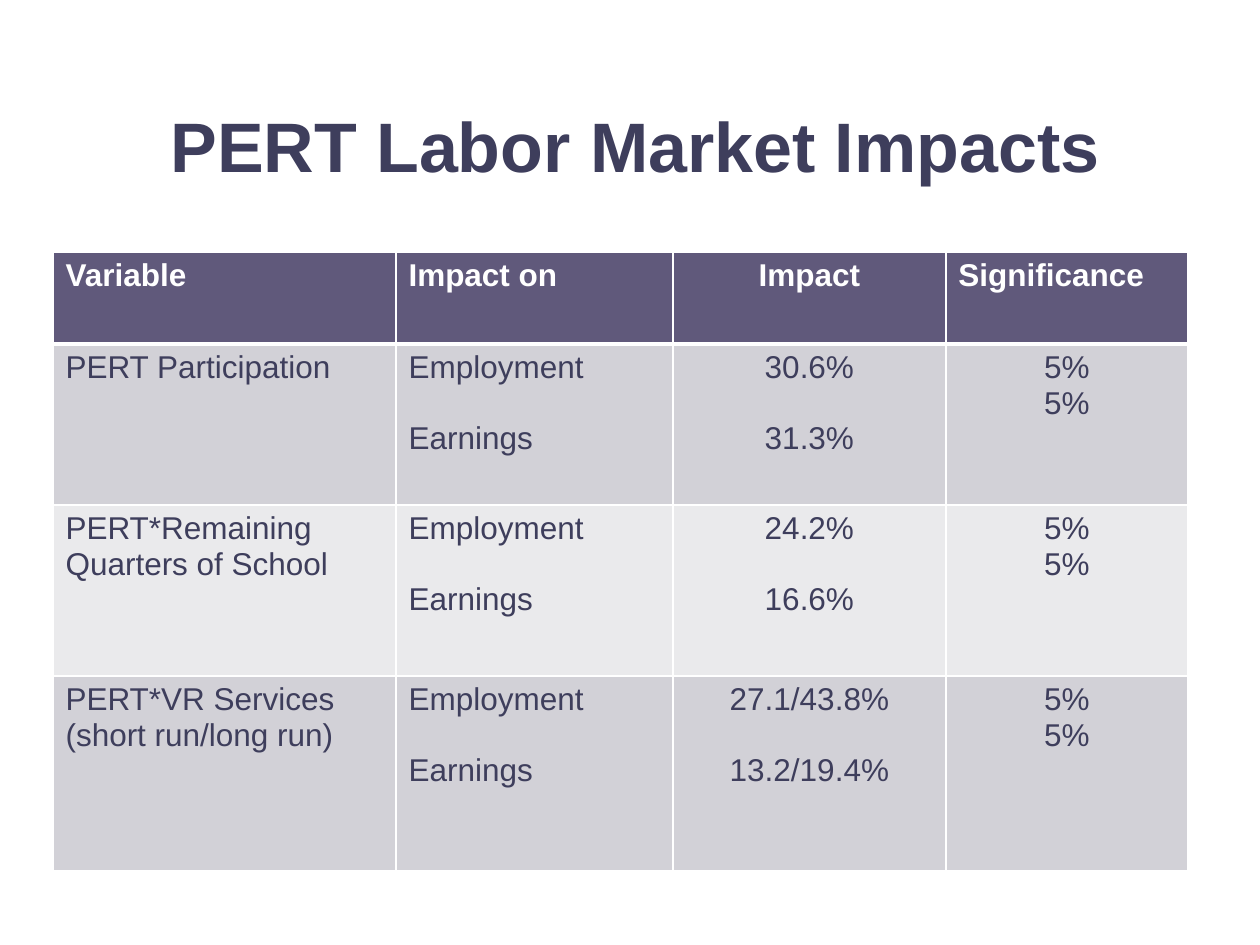
import pptx
import pptx.dml.color
import pptx.enum.text
import pptx.oxml
import pptx.oxml.ns
import pptx.util

EMU_PER_PX = 914400 / 126
FONT = "Arial"
INK = "3E3E5C"
WHITE = "FFFFFF"
HEADER_FILL = "60597B"
BAND_FILLS = ["D2D1D7", "EAEAEC"]
LEFT = pptx.enum.text.PP_ALIGN.LEFT
CENTER = pptx.enum.text.PP_ALIGN.CENTER
COLUMN_WIDTHS = [343, 277, 273, 242]
ROW_HEIGHTS = [92, 161, 171, 195]
HEADER_ALIGNMENTS = [LEFT, LEFT, CENTER, LEFT]
BODY_ALIGNMENTS = [LEFT, LEFT, CENTER, CENTER]
SPACED_COLUMNS = [1, 2]
LINE_GAP = 20
ROWS = [
    ["Variable", "Impact on", "Impact", "Significance"],
    ["PERT Participation", "Employment\nEarnings", "30.6%\n31.3%", "5%\n5%"],
    ["PERT*Remaining Quarters of School", "Employment\nEarnings", "24.2%\n16.6%", "5%\n5%"],
    ["PERT*VR Services\n(short run/long run)", "Employment\nEarnings",
     "27.1/43.8%\n13.2/19.4%", "5%\n5%"],
]


def px(length):
    return pptx.util.Emu(round(length * EMU_PER_PX))


def color(value):
    return pptx.dml.color.RGBColor.from_string(value)


def write_text(text_frame, text, size, font_color, bold, alignment, gap=0):
    text_frame.text = text
    for index, paragraph in enumerate(text_frame.paragraphs):
        paragraph.alignment = alignment
        paragraph.space_before = pptx.util.Pt(gap if index else 0)
        for run in paragraph.runs:
            run.font.name = FONT
            run.font.size = pptx.util.Pt(size)
            run.font.bold = bold
            run.font.color.rgb = color(font_color)


def set_borders(cell, widths):
    properties = cell._tc.get_or_add_tcPr()
    for index, (side, width) in enumerate(widths.items()):
        line = pptx.oxml.parse_xml(
            f'<a:ln{side} {pptx.oxml.ns.nsdecls("a")} w="{pptx.util.Pt(width)}">'
            f'<a:solidFill><a:srgbClr val="{WHITE}"/></a:solidFill></a:ln{side}>'
        )
        properties.insert(index, line)


def add_title(slide, text):
    title = slide.shapes.title
    title.left, title.top, title.width, title.height = map(px, (73, 53, 1124, 183))
    title.text_frame.vertical_anchor = pptx.enum.text.MSO_ANCHOR.MIDDLE
    write_text(title.text_frame, text, 40, INK, True, CENTER)


def fill_cell(cell, text, row, column):
    header = row == 0
    cell.fill.solid()
    cell.fill.fore_color.rgb = color(HEADER_FILL if header else BAND_FILLS[(row - 1) % 2])
    set_borders(cell, {"L": 1, "R": 1, "T": 3 if row == 1 else 1, "B": 3 if header else 1})
    alignments = HEADER_ALIGNMENTS if header else BODY_ALIGNMENTS
    gap = LINE_GAP if column in SPACED_COLUMNS else 0
    write_text(cell.text_frame, text, 18, WHITE if header else INK, header,
               alignments[column], gap)


def add_impact_table(slide):
    frame = slide.shapes.add_table(len(ROWS), len(COLUMN_WIDTHS), px(53), px(252),
                                   px(sum(COLUMN_WIDTHS)), px(sum(ROW_HEIGHTS)))
    table = frame.table
    for column, width in zip(table.columns, COLUMN_WIDTHS):
        column.width = px(width)
    for row, height in zip(table.rows, ROW_HEIGHTS):
        row.height = px(height)
    for row, texts in enumerate(ROWS):
        for column, text in enumerate(texts):
            fill_cell(table.cell(row, column), text, row, column)


def main():
    presentation = pptx.Presentation()
    presentation.slide_width = px(1260)
    presentation.slide_height = px(945)
    slide = presentation.slides.add_slide(presentation.slide_layouts[5])
    add_title(slide, "PERT Labor Market Impacts")
    add_impact_table(slide)
    presentation.save("out.pptx")


if __name__ == "__main__":
    main()
